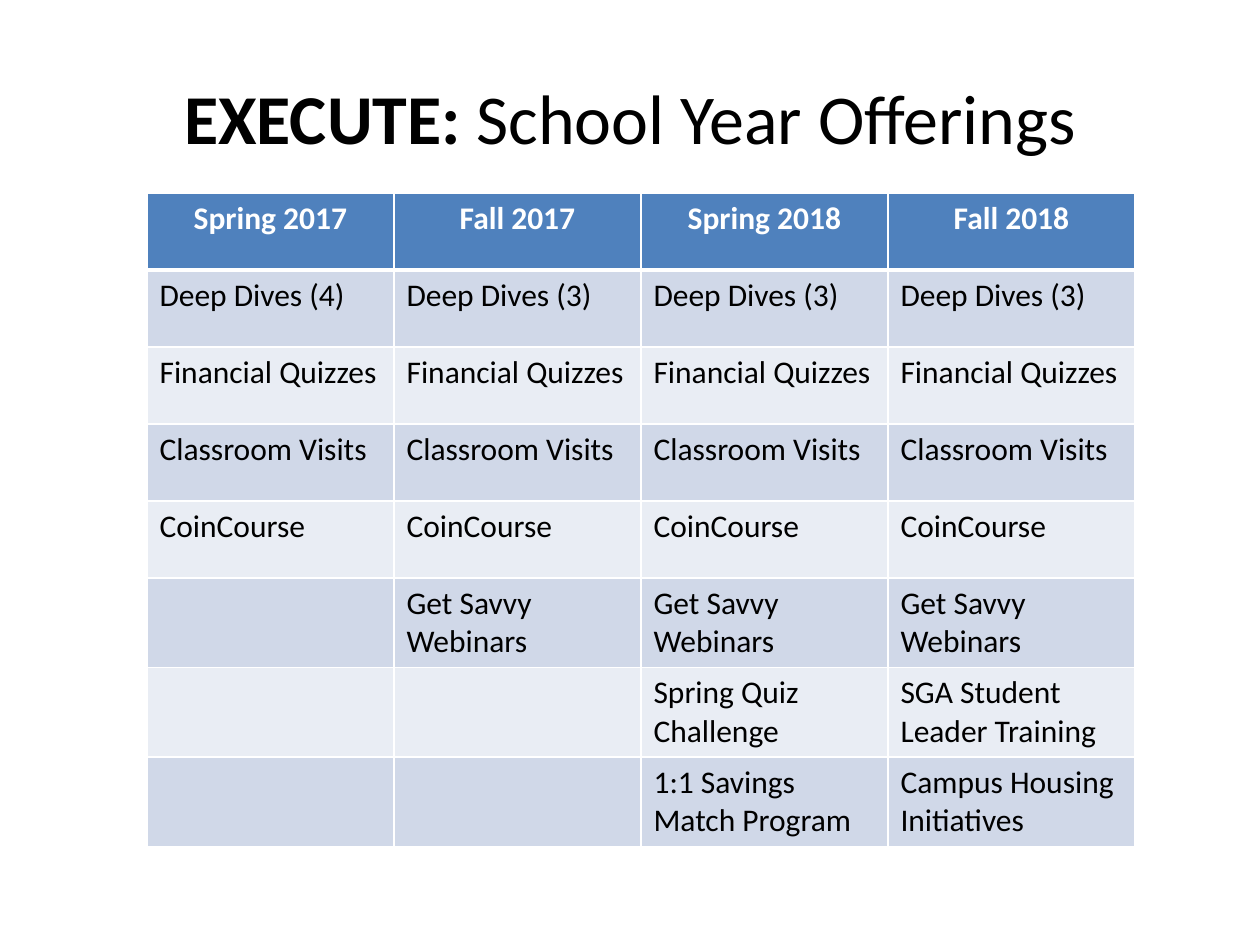
"""Build the slide listing the school year offerings by term."""
from dataclasses import dataclass

import pptx
import pptx.dml.color
import pptx.enum.text
import pptx.oxml
import pptx.oxml.ns
import pptx.slide
import pptx.table
import pptx.util

PX = 914400 // 126


@dataclass(frozen=True)
class Theme:
    font: str = "Calibri"
    title_size: int = 40
    table_size: int = 18
    text: str = "000000"
    header_text: str = "FFFFFF"
    header_fill: str = "4F81BD"
    bands: tuple[str, str] = ("D0D8E8", "E9EDF4")
    border: str = "FFFFFF"
    thin: int = 1
    thick: int = 3


@dataclass(frozen=True)
class Box:
    left: int
    top: int
    width: int
    height: int

    def emu(self) -> tuple[int, int, int, int]:
        return self.left * PX, self.top * PX, self.width * PX, self.height * PX


@dataclass(frozen=True)
class Term:
    name: str
    offerings: tuple[str, ...]


THEME = Theme()
TITLE_BOX = Box(63, 38, 1134, 158)
TABLE_BOX = Box(147, 193, 988, 616)
SHARED = ("Financial Quizzes", "Classroom Visits", "CoinCourse")
WEBINARS = "Get Savvy Webinars"
TERMS = (
    Term("Spring 2017", ("Deep Dives (4)", *SHARED)),
    Term("Fall 2017", ("Deep Dives (3)", *SHARED, WEBINARS)),
    Term("Spring 2018", ("Deep Dives (3)", *SHARED, WEBINARS,
                         "Spring Quiz Challenge", "1:1 Savings Match Program")),
    Term("Fall 2018", ("Deep Dives (3)", *SHARED, WEBINARS,
                       "SGA Student Leader Training", "Campus Housing Initiatives")),
)


def style_run(run, size: int, color: str, bold: bool) -> None:
    run.font.name = THEME.font
    run.font.size = pptx.util.Pt(size)
    run.font.bold = bold
    run.font.color.rgb = pptx.dml.color.RGBColor.from_string(color)


def draw_title(slide: pptx.slide.Slide, label: str, subject: str) -> None:
    title = slide.shapes.title
    title.left, title.top, title.width, title.height = TITLE_BOX.emu()
    title.text_frame.vertical_anchor = pptx.enum.text.MSO_ANCHOR.MIDDLE
    paragraph = title.text_frame.paragraphs[0]
    paragraph.alignment = pptx.enum.text.PP_ALIGN.CENTER
    for text, bold in ((label, True), (subject, False)):
        run = paragraph.add_run()
        run.text = text
        style_run(run, THEME.title_size, THEME.text, bold)


def draw_borders(cell: pptx.table._Cell, row: int) -> None:
    properties = cell._tc.get_or_add_tcPr()
    thick_side = {0: "B", 1: "T"}.get(row)
    for side in "LRTB":
        points = THEME.thick if side == thick_side else THEME.thin
        properties.append(pptx.oxml.parse_xml(
            f'<a:ln{side} {pptx.oxml.ns.nsdecls("a")} w="{pptx.util.Pt(points)}">'
            f'<a:solidFill><a:srgbClr val="{THEME.border}"/></a:solidFill></a:ln{side}>'))


def draw_cell(cell: pptx.table._Cell, row: int, text: str) -> None:
    header = row == 0
    draw_borders(cell, row)
    fill = THEME.header_fill if header else THEME.bands[(row - 1) % 2]
    cell.fill.solid()
    cell.fill.fore_color.rgb = pptx.dml.color.RGBColor.from_string(fill)
    cell.text_frame.text = text
    paragraph = cell.text_frame.paragraphs[0]
    if header:
        paragraph.alignment = pptx.enum.text.PP_ALIGN.CENTER
    for run in paragraph.runs:
        style_run(run, THEME.table_size, THEME.header_text if header else THEME.text, header)


def draw_table(slide: pptx.slide.Slide, terms: tuple[Term, ...]) -> None:
    row_count = 1 + max(len(term.offerings) for term in terms)
    table = slide.shapes.add_table(row_count, len(terms), *TABLE_BOX.emu()).table
    for column, term in enumerate(terms):
        entries = (term.name, *term.offerings)
        for row in range(row_count):
            text = entries[row] if row < len(entries) else ""
            draw_cell(table.cell(row, column), row, text)


def main() -> None:
    presentation = pptx.Presentation()
    presentation.slide_width = 1260 * PX
    presentation.slide_height = 945 * PX
    slide = presentation.slides.add_slide(presentation.slide_layouts[5])
    draw_title(slide, "EXECUTE: ", "School Year Offerings")
    draw_table(slide, TERMS)
    presentation.save("out.pptx")


if __name__ == "__main__":
    main()
